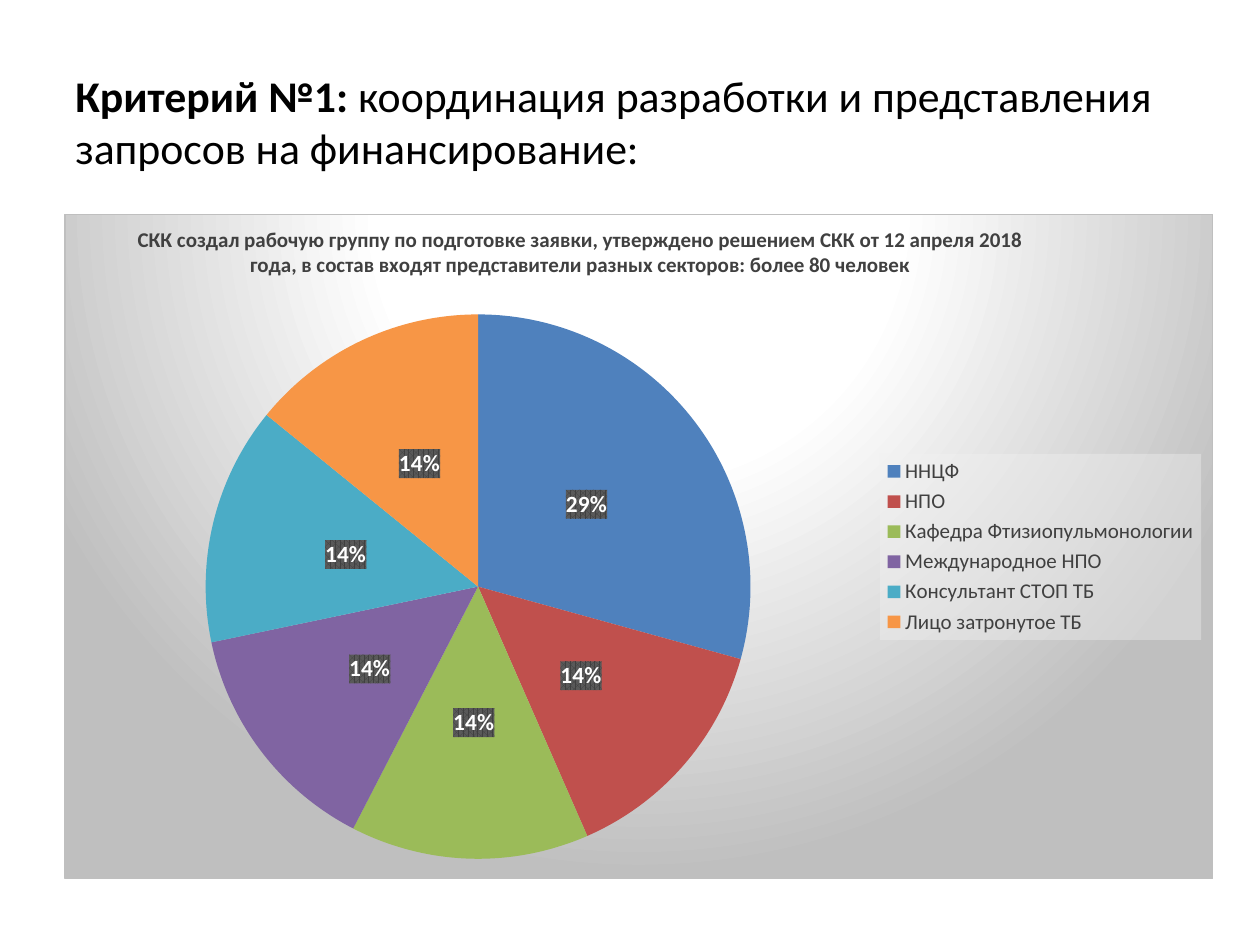
from pptx import Presentation
from pptx.chart.data import CategoryChartData
from pptx.dml.color import RGBColor
from pptx.enum import chart as kinds, text
from pptx.oxml import parse_xml
from pptx.oxml.ns import nsdecls
from pptx.util import Inches, Pt

BLACK = RGBColor(0, 0, 0)
WHITE = RGBColor(255, 255, 255)
GRAY = RGBColor(0x40, 0x40, 0x40)
SLICES = {
    "ННЦФ": (29, RGBColor(0x4F, 0x81, 0xBD)),
    "НПО": (14, RGBColor(0xC0, 0x50, 0x4D)),
    "Кафедра Фтизиопульмонологии": (14, RGBColor(0x9B, 0xBB, 0x59)),
    "Международное НПО": (14, RGBColor(0x80, 0x64, 0xA2)),
    "Консультант СТОП ТБ": (14, RGBColor(0x4B, 0xAC, 0xC6)),
    "Лицо затронутое ТБ": (14, RGBColor(0xF7, 0x96, 0x46)),
}


def write(para, words, size, color, bold=False):
    run = para.add_run()
    run.text = words
    style(run.font, size, color, bold)


def style(font, size, color, bold=False):
    font.name = "Calibri"
    font.size = Pt(size)
    font.bold = bold
    font.color.rgb = color


deck = Presentation()
deck.slide_width, deck.slide_height = Inches(10), Inches(7.5)
slide = deck.slides.add_slide(deck.slide_layouts[6])

box = slide.shapes.add_textbox(Inches(0.5), Inches(0.3), Inches(9), Inches(1.32))
frame = box.text_frame
frame.word_wrap = True
frame.vertical_anchor = text.MSO_ANCHOR.MIDDLE
head = frame.paragraphs[0]
write(head, "Критерий №1: ", size=25, color=BLACK, bold=True)
write(head, "координация разработки и представления запросов на финансирование:", size=25, color=BLACK)

data = CategoryChartData()
data.categories = list(SLICES)
data.add_series("Series 1", [share for share, color in SLICES.values()])
chart = slide.shapes.add_chart(
    kinds.XL_CHART_TYPE.PIE, Inches(0.51), Inches(1.7), Inches(9.12), Inches(5.28), data
).chart
style(chart.font, 10, BLACK)

chart.has_title = True
title = chart.chart_title
title.include_in_layout = False
write(
    title.text_frame.paragraphs[0],
    "СКК создал рабочую группу по подготовке заявки, утверждено решением СКК от 12 апреля 2018 "
    "года, в состав входят представители разных секторов: более 80 человек",
    size=12, color=GRAY, bold=True,
)

chart.has_legend = True
legend = chart.legend
legend.position = kinds.XL_LEGEND_POSITION.RIGHT
legend.include_in_layout = False
style(legend.font, 12, GRAY)

plot = chart.plots[0]
plot.vary_by_categories = True
for point, (share, color) in enumerate(SLICES.values()):
    fill = plot.series[0].points[point].format.fill
    fill.solid()
    fill.fore_color.rgb = color

plot.has_data_labels = True
labels = plot.data_labels
labels.show_percentage = True
labels.show_value = False
labels.number_format = "0%"
labels.number_format_is_linked = False
labels.position = kinds.XL_LABEL_POSITION.CENTER
style(labels.font, 13.3, WHITE, bold=True)

space = chart.element
part = space.find("{*}chart")
area = part.find("{*}plotArea")
spots = [
    (title.element if hasattr(title, "element") else part.find("{*}title"), (0.06, 0.01)),
    (area, (0.12, 0.15, 0.48, 0.82)),
    (part.find("{*}legend"), (0.71, 0.36, 0.28, 0.28)),
]
for node, sides in spots:
    for old in node.findall("{*}layout"):
        node.remove(old)
    inner = '<c:layoutTarget val="inner"/>' if node is area else ""
    modes = '<c:xMode val="edge"/><c:yMode val="edge"/>'
    sizes = "".join(f'<c:{side} val="{size}"/>' for side, size in zip("xywh", sides))
    layout = parse_xml(
        f'<c:layout {nsdecls("c")}><c:manualLayout>{inner}{modes}{sizes}</c:manualLayout></c:layout>'
    )
    node.insert(0 if node is area else 1, layout)

back = (
    '<a:gradFill><a:gsLst><a:gs pos="0"><a:srgbClr val="FFFFFF"/></a:gs>'
    '<a:gs pos="39000"><a:srgbClr val="FFFFFF"/></a:gs>'
    '<a:gs pos="100000"><a:srgbClr val="BFBFBF"/></a:gs></a:gsLst>'
    '<a:path path="circle"><a:fillToRect l="50000" t="-80000" r="50000" b="180000"/></a:path>'
    '</a:gradFill><a:ln w="9525"><a:solidFill><a:srgbClr val="BFBFBF"/></a:solidFill></a:ln>'
)
veil = '<a:solidFill><a:srgbClr val="F2F2F2"><a:alpha val="39000"/></a:srgbClr></a:solidFill>'
weave = (
    '<a:pattFill prst="pct75"><a:fgClr><a:srgbClr val="404040"/></a:fgClr>'
    '<a:bgClr><a:srgbClr val="595959"/></a:bgClr></a:pattFill>'
)
for node, look in [(space, back), (part.find("{*}legend"), veil), (plot._element.find("{*}dLbls"), weave)]:
    shape = parse_xml(f'<c:spPr {nsdecls("c", "a")}>{look}</c:spPr>')
    node.find("{*}txPr").addprevious(shape)

deck.save("out.pptx")
